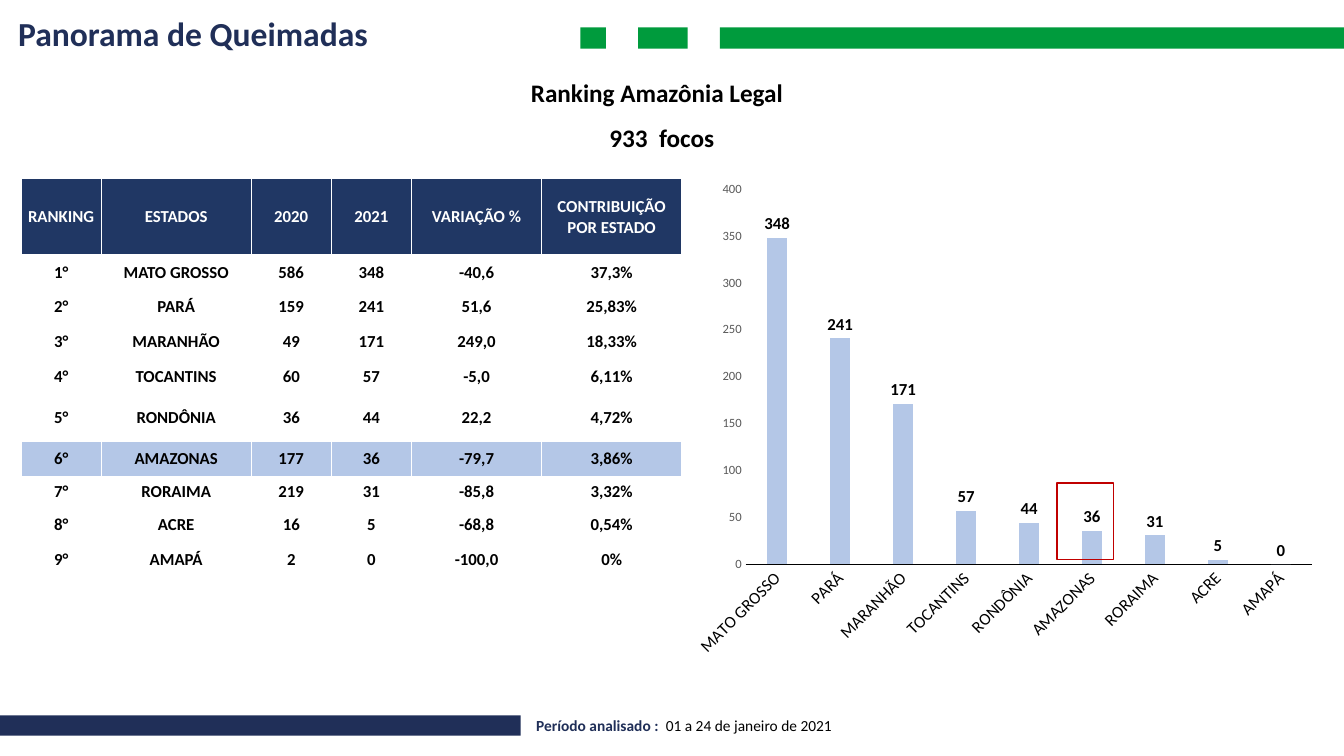
import pptx
import pptx.chart.data
import pptx.dml.color
import pptx.enum.chart
import pptx.enum.shapes
import pptx.enum.text
import pptx.oxml
import pptx.oxml.ns
import pptx.util

Cm = pptx.util.Cm
NAVY, GREEN, HEADER, LIGHT = "202F58", "009B3D", "203764", "B4C7E7"


def rgb(value):
    return pptx.dml.color.RGBColor.from_string(value)


def add_text(p, text, size=12, color="000000", bold=True, align=None):
    r = p.add_run()
    r.text = text
    r.font.name = "Calibri"
    r.font.size = pptx.util.Pt(size)
    r.font.bold = bold
    r.font.color.rgb = rgb(color)
    if align is not None:
        p.alignment = align


prs = pptx.Presentation()
prs.slide_width, prs.slide_height = Cm(33.87), Cm(19.05)
s = prs.slides.add_slide(prs.slide_layouts[5])
left = pptx.enum.text.PP_ALIGN.LEFT
center = pptx.enum.text.PP_ALIGN.CENTER
middle = pptx.enum.text.MSO_ANCHOR.MIDDLE
rect = pptx.enum.shapes.MSO_SHAPE.RECTANGLE

bars = [
    (18.14, 0.69, 15.73, 0.54, GREEN),
    (16.08, 0.69, 1.25, 0.54, GREEN),
    (14.63, 0.69, 0.64, 0.54, GREEN),
    (0, 18.03, 13.12, 0.51, NAVY),
]
for x, y, w, h, color in bars:
    sp = s.shapes.add_shape(rect, Cm(x), Cm(y), Cm(w), Cm(h))
    sp.shadow.inherit = False
    sp.fill.solid()
    sp.fill.fore_color.rgb = rgb(color)
    sp.line.fill.background()

title = s.shapes.title
title.left, title.top, title.width, title.height = Cm(0.2), Cm(0.2), Cm(14), Cm(1.28)
title.text_frame.vertical_anchor = middle
add_text(title.text_frame.paragraphs[0], "Panorama de Queimadas", size=24, color=NAVY, align=left)

captions = [
    (13.13, 1.83, 8.08, 1.03, [("Ranking Amazônia Legal", 18, "000000", True)]),
    (15.11, 2.95, 3.66, 1.03, [("933  focos", 18, "000000", True)]),
    (13.26, 17.93, 14.48, 0.73, [
        ("Período analisado :  ", 11, NAVY, True),
        ("01 a 24 de janeiro de 2021", 11, "000000", False),
    ]),
]
for x, y, w, h, runs in captions:
    tf = s.shapes.add_textbox(Cm(x), Cm(y), Cm(w), Cm(h)).text_frame
    tf.word_wrap = True
    for text, size, color, bold in runs:
        add_text(tf.paragraphs[0], text, size=size, color=color, bold=bold)

header = ["RANKING", "ESTADOS", "2020", "2021", "VARIAÇÃO %", "CONTRIBUIÇÃO POR ESTADO"]
states = [
    ("MATO GROSSO", 586, 348, "-40,6", "37,3%"),
    ("PARÁ", 159, 241, "51,6", "25,83%"),
    ("MARANHÃO", 49, 171, "249,0", "18,33%"),
    ("TOCANTINS", 60, 57, "-5,0", "6,11%"),
    ("RONDÔNIA", 36, 44, "22,2", "4,72%"),
    ("AMAZONAS", 177, 36, "-79,7", "3,86%"),
    ("RORAIMA", 219, 31, "-85,8", "3,32%"),
    ("ACRE", 16, 5, "-68,8", "0,54%"),
    ("AMAPÁ", 2, 0, "-100,0", "0%"),
]
rows = [header] + [(f"{rank}°", *state) for rank, state in enumerate(states, 1)]
col_widths = [2.02, 3.78, 2.02, 2.02, 3.28, 3.53]
row_heights = [1.92, 0.87, 0.87, 0.87, 0.9, 1.19, 0.87, 0.8, 0.87, 0.87]
tbl = s.shapes.add_table(
    len(rows), len(header), Cm(0.53), Cm(4.5), Cm(sum(col_widths)), Cm(sum(row_heights))
).table
tbl.first_row = tbl.horz_banding = False
for col, width in zip(tbl.columns, col_widths):
    col.width = Cm(width)
for row, height in zip(tbl.rows, row_heights):
    row.height = Cm(height)

ns = pptx.oxml.ns.nsdecls("a")
for i, row in enumerate(rows):
    fill = HEADER if i == 0 else LIGHT if row[1] == "AMAZONAS" else None
    for j, value in enumerate(row):
        cell = tbl.cell(i, j)
        cell.margin_left = cell.margin_right = cell.margin_top = Cm(0.02)
        cell.margin_bottom = 0
        cell.vertical_anchor = middle
        color = "FFFFFF" if i == 0 else "000000"
        add_text(cell.text_frame.paragraphs[0], str(value), color=color, align=center)
        tcPr = cell._tc.get_or_add_tcPr()
        for side in ("lnL", "lnR", "lnT", "lnB"):
            tcPr.append(pptx.oxml.parse_xml(
                f'<a:{side} {ns} w="6350"><a:solidFill><a:srgbClr val="FFFFFF"/></a:solidFill></a:{side}>'
            ))
        if fill:
            cell.fill.solid()
            cell.fill.fore_color.rgb = rgb(fill)
        else:
            cell.fill.background()

data = pptx.chart.data.CategoryChartData()
data.categories = [state[0] for state in states]
data.add_series("2021", [state[2] for state in states])
chart = s.shapes.add_chart(
    pptx.enum.chart.XL_CHART_TYPE.COLUMN_CLUSTERED, Cm(17.17), Cm(4.39), Cm(16.23), Cm(12.45), data
).chart
chart.has_legend = chart.has_title = False
chart.font.name = "Calibri"
chart.font.size = pptx.util.Pt(10)

plot = chart.plots[0]
plot.gap_width, plot.overlap, plot.vary_by_categories = 219, -27, False
fmt = plot.series[0].format
fmt.fill.solid()
fmt.fill.fore_color.rgb = rgb(LIGHT)
plot.has_data_labels = True
labels = plot.data_labels
labels.show_value = True
labels.position = pptx.enum.chart.XL_LABEL_POSITION.OUTSIDE_END
labels.font.bold = True

cat, val = chart.category_axis, chart.value_axis
val.has_major_gridlines = False
val.minimum_scale, val.maximum_scale, val.major_unit = 0, 400, 50
for axis in (cat, val):
    axis.major_tick_mark = pptx.enum.chart.XL_TICK_MARK.NONE
fonts = [(labels.font, 12, "000000"), (cat.tick_labels.font, 12, "000000"), (val.tick_labels.font, 9, "595959")]
for font, size, color in fonts:
    font.name = "Calibri"
    font.size = pptx.util.Pt(size)
    font.color.rgb = rgb(color)
val.format.line.fill.background()
cat.format.line.color.rgb = rgb("000000")
cat.format.line.width = pptx.util.Pt(0.75)
cat._element.find(".//" + pptx.oxml.ns.qn("a:bodyPr")).set("rot", "-2700000")

area = chart._chartSpace.chart.plotArea
for old in area.findall(pptx.oxml.ns.qn("c:layout")):
    area.remove(old)
frame = "".join(
    f'<c:{key} val="{value}"/>'
    for key, value in [("layoutTarget", "inner"), ("xMode", "edge"), ("yMode", "edge"),
                       ("x", 0.1), ("y", 0.03), ("w", 0.88), ("h", 0.76)]
)
area.insert(0, pptx.oxml.parse_xml(
    f'<c:layout {pptx.oxml.ns.nsdecls("c")}><c:manualLayout>{frame}</c:manualLayout></c:layout>'
))

marker = s.shapes.add_shape(rect, Cm(26.64), Cm(12.17), Cm(1.42), Cm(1.93))
marker.shadow.inherit = False
marker.fill.background()
marker.line.color.rgb = rgb("C00000")
marker.line.width = pptx.util.Pt(1)

prs.save("out.pptx")
